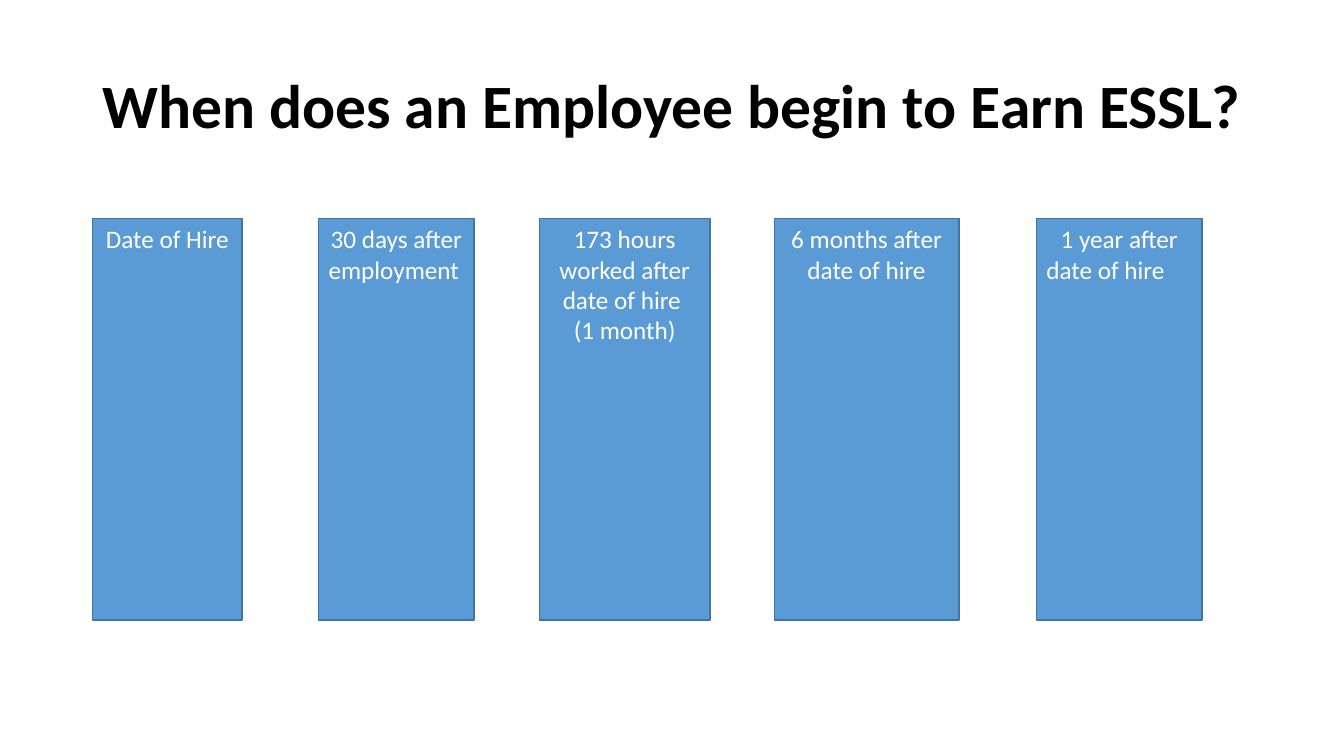
from dataclasses import dataclass

import pptx
import pptx.dml.color
import pptx.enum.shapes
import pptx.enum.text
import pptx.slide
import pptx.text.text
import pptx.util

BLACK = pptx.dml.color.RGBColor(0x00, 0x00, 0x00)
WHITE = pptx.dml.color.RGBColor(0xFF, 0xFF, 0xFF)
BLUE = pptx.dml.color.RGBColor(0x5B, 0x9B, 0xD5)
DARK_BLUE = pptx.dml.color.RGBColor(0x43, 0x73, 0x9E)
FONT = "Calibri"

SLIDE_WIDTH = pptx.util.Inches(13.33)
SLIDE_HEIGHT = pptx.util.Inches(7.5)

# Positions and sizes are percentages of the slide's width or height.
MARGIN = 6.9
TITLE_TOP, TITLE_WIDTH, TITLE_HEIGHT = 5.33, 86.27, 18
MILESTONE_TOP, MILESTONE_HEIGHT = 28.93, 53.07


@dataclass(frozen=True)
class Milestone:
    left: float
    width: float
    wording: str


MILESTONES = (
    Milestone(MARGIN, 11.1, "Date of Hire"),
    Milestone(23.71, 11.55, "30 days after employment\t"),
    Milestone(40.14, 12.68, "173 hours worked after date of hire \n(1 month)"),
    Milestone(57.61, 13.73, "6 months after date of hire"),
    Milestone(77.12, 12.3, "1 year after date of hire\t"),
)


def across(percent: float) -> pptx.util.Emu:
    return pptx.util.Emu(round(SLIDE_WIDTH * percent / 100))


def down(percent: float) -> pptx.util.Emu:
    return pptx.util.Emu(round(SLIDE_HEIGHT * percent / 100))


def set_font(paragraph: pptx.text.text._Paragraph, size: float,
             color: pptx.dml.color.RGBColor, bold: bool = False) -> None:
    paragraph.font.name = FONT
    paragraph.font.size = pptx.util.Pt(size)
    paragraph.font.bold = bold
    paragraph.font.color.rgb = color


def draw_title(slide: pptx.slide.Slide, wording: str) -> None:
    title = slide.shapes.add_textbox(
        across(MARGIN), down(TITLE_TOP), across(TITLE_WIDTH), down(TITLE_HEIGHT))
    frame = title.text_frame
    frame.word_wrap = True
    frame.vertical_anchor = pptx.enum.text.MSO_ANCHOR.MIDDLE
    frame.text = wording
    heading = frame.paragraphs[0]
    heading.line_spacing = 0.9
    set_font(heading, 44, BLACK, bold=True)


def draw_milestone(slide: pptx.slide.Slide, milestone: Milestone) -> None:
    box = slide.shapes.add_shape(
        pptx.enum.shapes.MSO_SHAPE.FLOWCHART_PROCESS,
        across(milestone.left), down(MILESTONE_TOP),
        across(milestone.width), down(MILESTONE_HEIGHT))
    box.shadow.inherit = False
    box.fill.solid()
    box.fill.fore_color.rgb = BLUE
    box.line.color.rgb = DARK_BLUE
    box.line.width = pptx.util.Pt(1)
    frame = box.text_frame
    frame.word_wrap = True
    frame.vertical_anchor = pptx.enum.text.MSO_ANCHOR.TOP
    frame.text = milestone.wording
    for paragraph in frame.paragraphs:
        paragraph.alignment = pptx.enum.text.PP_ALIGN.CENTER
        set_font(paragraph, 18, WHITE)


def main() -> None:
    deck = pptx.Presentation()
    deck.slide_width = SLIDE_WIDTH
    deck.slide_height = SLIDE_HEIGHT
    slide = deck.slides.add_slide(deck.slide_layouts[6])
    draw_title(slide, "When does an Employee begin to Earn ESSL?")
    for milestone in MILESTONES:
        draw_milestone(slide, milestone)
    deck.save("out.pptx")


if __name__ == "__main__":
    main()
